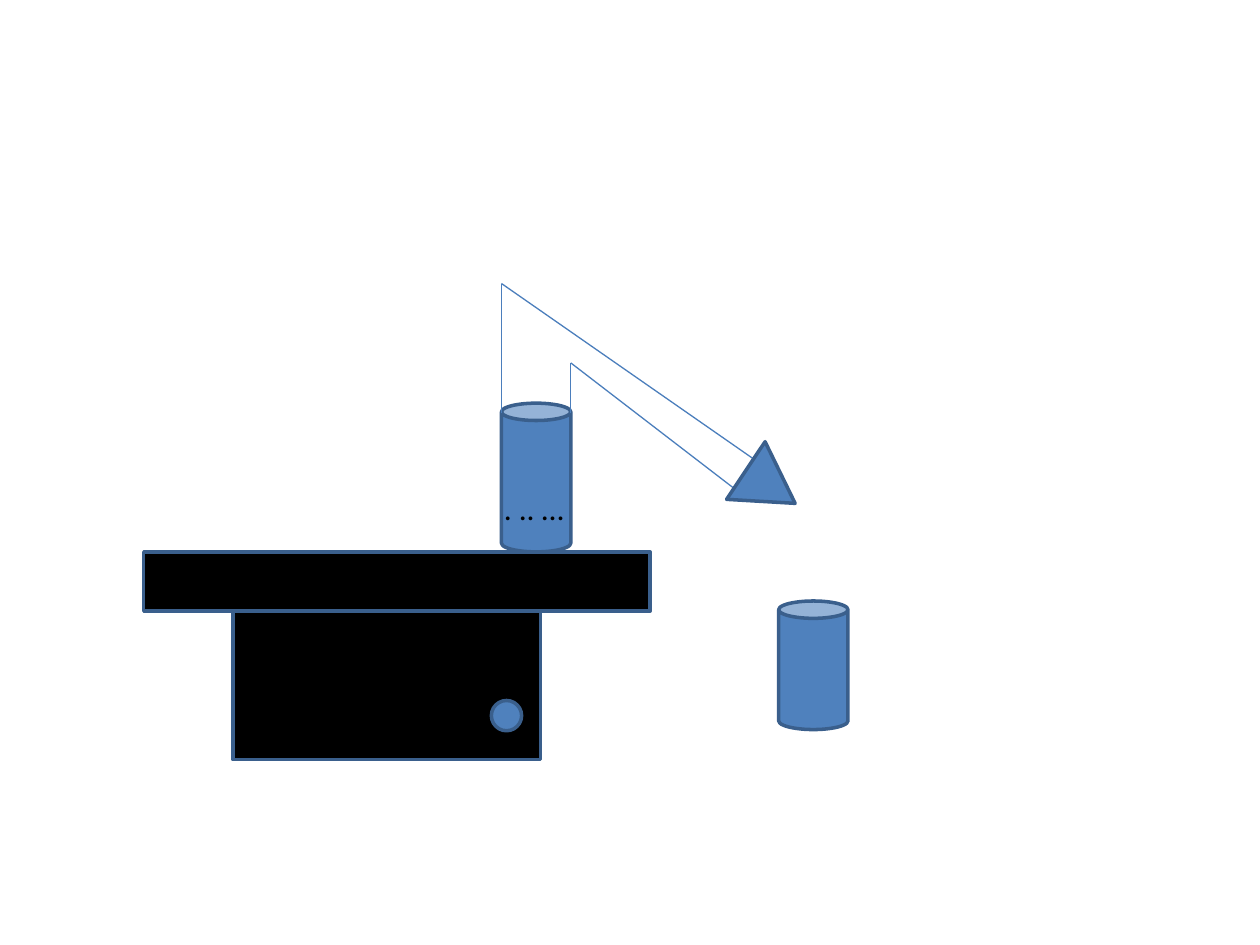
import dataclasses
import pptx
import pptx.util
import pptx.dml.color
import pptx.enum.shapes
import pptx.oxml
import pptx.oxml.ns

Inches = pptx.util.Inches
Kind = pptx.enum.shapes.MSO_SHAPE


@dataclasses.dataclass(frozen=True)
class Theme:
    blue: str = "4F81BD"
    edge: str = "3A5F8C"
    wire: str = "4B7EBC"
    black: str = "000000"
    font: str = "Calibri"
    size: float = 18
    thick: float = 2
    thin: float = 0.75


THEME = Theme()


def color(code):
    return pptx.dml.color.RGBColor.from_string(code)


def apply(item, values):
    for name, value in values.items():
        setattr(item, name, value)


def stroke(line, code, width):
    line.color.rgb = color(code)
    line.width = pptx.util.Pt(width)


def add_part(slide, kind, box, fill=THEME.blue, turn=0):
    part = slide.shapes.add_shape(kind, *map(Inches, box))
    part.shadow.inherit = False
    part.rotation = turn
    part.fill.solid()
    part.fill.fore_color.rgb = color(fill)
    stroke(part.line, THEME.edge, THEME.thick)


def add_label(slide, box, text):
    frame = slide.shapes.add_textbox(*map(Inches, box)).text_frame
    frame.word_wrap = True
    run = frame.paragraphs[0].add_run()
    run.text = text
    apply(run.font, {"name": THEME.font, "size": pptx.util.Pt(THEME.size)})
    run.font.color.rgb = color(THEME.black)


def add_tube(slide, points):
    for start, end in zip(points, points[1:]):
        wire = slide.shapes.add_connector(
            pptx.enum.shapes.MSO_CONNECTOR.STRAIGHT, *map(Inches, start + end))
        stroke(wire.line, THEME.wire, THEME.thin)
        props = wire._element.spPr
        props.append(pptx.oxml.parse_xml(
            "<a:effectLst %s/>" % pptx.oxml.ns.nsdecls("a")))


def main():
    deck = pptx.Presentation()
    apply(deck, {"slide_width": Inches(10), "slide_height": Inches(7.5)})
    slide = deck.slides.add_slide(deck.slide_layouts[6])

    add_part(slide, Kind.RECTANGLE, (1.85, 4.85, 2.44, 1.18), THEME.black)
    add_part(slide, Kind.RECTANGLE, (1.14, 4.38, 4.02, 0.47), THEME.black)
    add_part(slide, Kind.OVAL, (3.9, 5.56, 0.24, 0.24))

    left, top, width = 3.98, 3.2, 0.55
    right, rim = left + width, top + 0.08
    add_part(slide, Kind.CAN, (left, top, width, 1.18))
    add_label(slide, (3.9, 3.83, 0.94, 0.4), ". .. …")

    add_tube(slide, [(right, rim), (right, 2.88), (5.87, 3.91)])
    add_tube(slide, [(left, rim), (left, 2.25), (6.02, 3.67)])
    add_part(slide, Kind.FLOWCHART_EXTRACT, (5.84, 3.63, width, 0.47), turn=123.7)
    add_part(slide, Kind.CAN, (6.18, 4.77, width, 1.02))

    deck.save("out.pptx")


if __name__ == "__main__":
    main()
